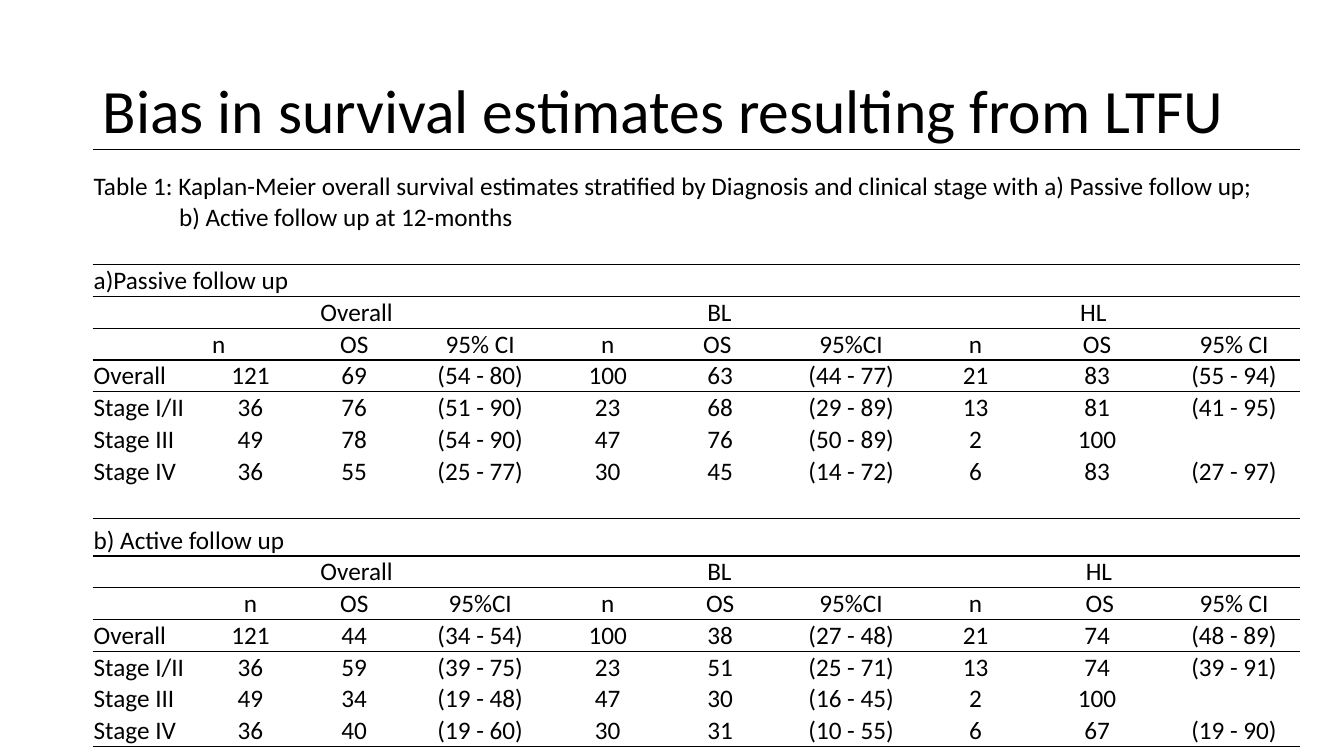
import pptx
import pptx.dml.color
import pptx.enum.text
import pptx.oxml
import pptx.util
from lxml import etree

Pt = pptx.util.Pt
Align = pptx.enum.text.PP_ALIGN
Anchor = pptx.enum.text.MSO_ANCHOR
BLACK = pptx.dml.color.RGBColor(0, 0, 0)
NAMESPACE = "http://schemas.openxmlformats.org/drawingml/2006/main"
PLAIN_TABLE_STYLE = "{2D5ABB26-0587-4C30-8999-92F81FD0307C}"

TITLE = "Bias in survival estimates resulting from LTFU"
CAPTION = [
    "Table 1: Kaplan-Meier overall survival estimates stratified by Diagnosis "
    "and clinical stage with a) Passive follow up;",
    "b) Active follow up at 12-months",
]
PANELS = [
    {
        "first_row": 2,
        "name": "a)Passive follow up",
        "groups": [("Overall", 85), ("BL", 110), ("HL", 110)],
        "heads": ["", "n", "OS", "95% CI", "n", "OS ", "95%CI", "n", "OS", "95% CI"],
        "stages": [
            ("Overall", "121", "69", "(54 - 80)", "100", "63", "(44 - 77)", "21", "83", "(55 - 94)"),
            ("Stage I/II", "36", "76", "(51 - 90)", "23", "68", "(29 - 89)", "13", "81", "(41 - 95)"),
            ("Stage III", "49", "78", "(54 - 90)", "47", "76", "(50 - 89)", "2", "100", ""),
            ("Stage IV", "36", "55", "(25 - 77)", "30", "45", "(14 - 72)", "6", "83", "(27 - 97)"),
        ],
    },
    {
        "first_row": 10,
        "name": "b) Active follow up",
        "groups": [("Overall", 85), ("BL", 110), ("HL", 114)],
        "heads": ["", "n", "OS", "95%CI", "n", "OS", "95%CI", "n", " OS", "95% CI"],
        "stages": [
            ("Overall", "121", "44", "(34 - 54)", "100", "38", "(27 - 48)", "21", "74", "(48 - 89)"),
            ("Stage I/II", "36", "59", "(39 - 75)", "23", "51", "(25 - 71)", "13", "74", "(39 - 91)"),
            ("Stage III", "49", "34", "(19 - 48)", "47", "30", "(16 - 45)", "2", "100", ""),
            ("Stage IV", "36", "40", "(19 - 60)", "30", "31", "(10 - 55)", "6", "67", "(19 - 90)"),
        ],
    },
]
COLUMN_WIDTHS = [77, 71.3, 77, 103, 79.2, 81.4, 105.8, 72, 101.5, 94.3]
ROW_HEIGHTS = [59.8] + [22.7] * 9 + [26.6] + [22.7] * 6
RULED_ROW_TOPS = {0, 2, 3, 4, 5, 10, 11, 12, 13, len(ROW_HEIGHTS)}
FULL_WIDTH_ROWS = [0, 2, 9, 10]
LAST_COLUMN = len(COLUMN_WIDTHS) - 1


def write(paragraph, text, size=18, align=Align.LEFT, indent=0, spacing=None):
    paragraph.alignment = align
    if spacing:
        paragraph.line_spacing = spacing
    if indent:
        paragraph._p.get_or_add_pPr().set("marL", str(Pt(indent)))
    if text:
        run = paragraph.add_run()
        run.text = text
        run.font.name = "Calibri"
        run.font.size = Pt(size)
        run.font.color.rgb = BLACK


def write_cell(cell, text, **text_format):
    write(cell.text_frame.paragraphs[0], text, **text_format)


def rule_edge(cell, tag):
    line = pptx.oxml.parse_xml(
        f'<a:{tag} xmlns:a="{NAMESPACE}" w="{Pt(1)}"><a:solidFill>'
        f'<a:srgbClr val="{BLACK}"/></a:solidFill></a:{tag}>'
    )
    cell._tc.get_or_add_tcPr().append(line)


def format_cell(cell, row):
    cell.margin_left = cell.margin_right = cell.margin_top = Pt(0.7)
    cell.margin_bottom = Pt(0)
    cell.vertical_anchor = Anchor.BOTTOM
    if row in RULED_ROW_TOPS:
        rule_edge(cell, "lnT")
    if row + 1 in RULED_ROW_TOPS:
        rule_edge(cell, "lnB")
    cell.fill.background()


def fill_panel(table, panel):
    first = panel["first_row"]
    write_cell(table.cell(first, 0), panel["name"])
    for index, (group, indent) in enumerate(panel["groups"]):
        column = 1 + 3 * index
        table.cell(first + 1, column).merge(table.cell(first + 1, column + 2))
        write_cell(table.cell(first + 1, column), group, indent=indent)
    for row, values in enumerate([panel["heads"], *panel["stages"]], first + 2):
        for column, value in enumerate(values):
            align = Align.CENTER if column else Align.LEFT
            write_cell(table.cell(row, column), value, align=align)


def add_survival_table(slide):
    frame = slide.shapes.add_table(
        len(ROW_HEIGHTS), len(COLUMN_WIDTHS), Pt(66.24), Pt(106.6),
        Pt(sum(COLUMN_WIDTHS)), Pt(sum(ROW_HEIGHTS)),
    )
    table = frame.table
    table.first_row = table.horz_banding = False
    style = table._tbl.tblPr.find(etree.QName(NAMESPACE, "tableStyleId"))
    style.text = PLAIN_TABLE_STYLE
    for column, width in zip(table.columns, COLUMN_WIDTHS):
        column.width = Pt(width)
    for index, height in enumerate(ROW_HEIGHTS):
        table.rows[index].height = Pt(height)
        for cell in table.rows[index].cells:
            format_cell(cell, index)
    for row in FULL_WIDTH_ROWS:
        table.cell(row, 0).merge(table.cell(row, LAST_COLUMN))
    caption = table.cell(0, 0).text_frame
    write(caption.paragraphs[0], CAPTION[0])
    write(caption.add_paragraph(), CAPTION[1], indent=61)
    for panel in PANELS:
        fill_panel(table, panel)
    table.cell(4, 1).margin_right = Pt(46)


def main():
    presentation = pptx.Presentation()
    presentation.slide_width, presentation.slide_height = Pt(960), Pt(540)
    slide = presentation.slides.add_slide(presentation.slide_layouts[5])
    title = slide.shapes.title
    title.left, title.top, title.width, title.height = Pt(66.24), Pt(28.8), Pt(828), Pt(104.4)
    title.text_frame.vertical_anchor = Anchor.MIDDLE
    title.text_frame.auto_size = pptx.enum.text.MSO_AUTO_SIZE.NONE
    write(title.text_frame.paragraphs[0], TITLE, size=44, spacing=0.9)
    add_survival_table(slide)
    presentation.save("out.pptx")


if __name__ == "__main__":
    main()
